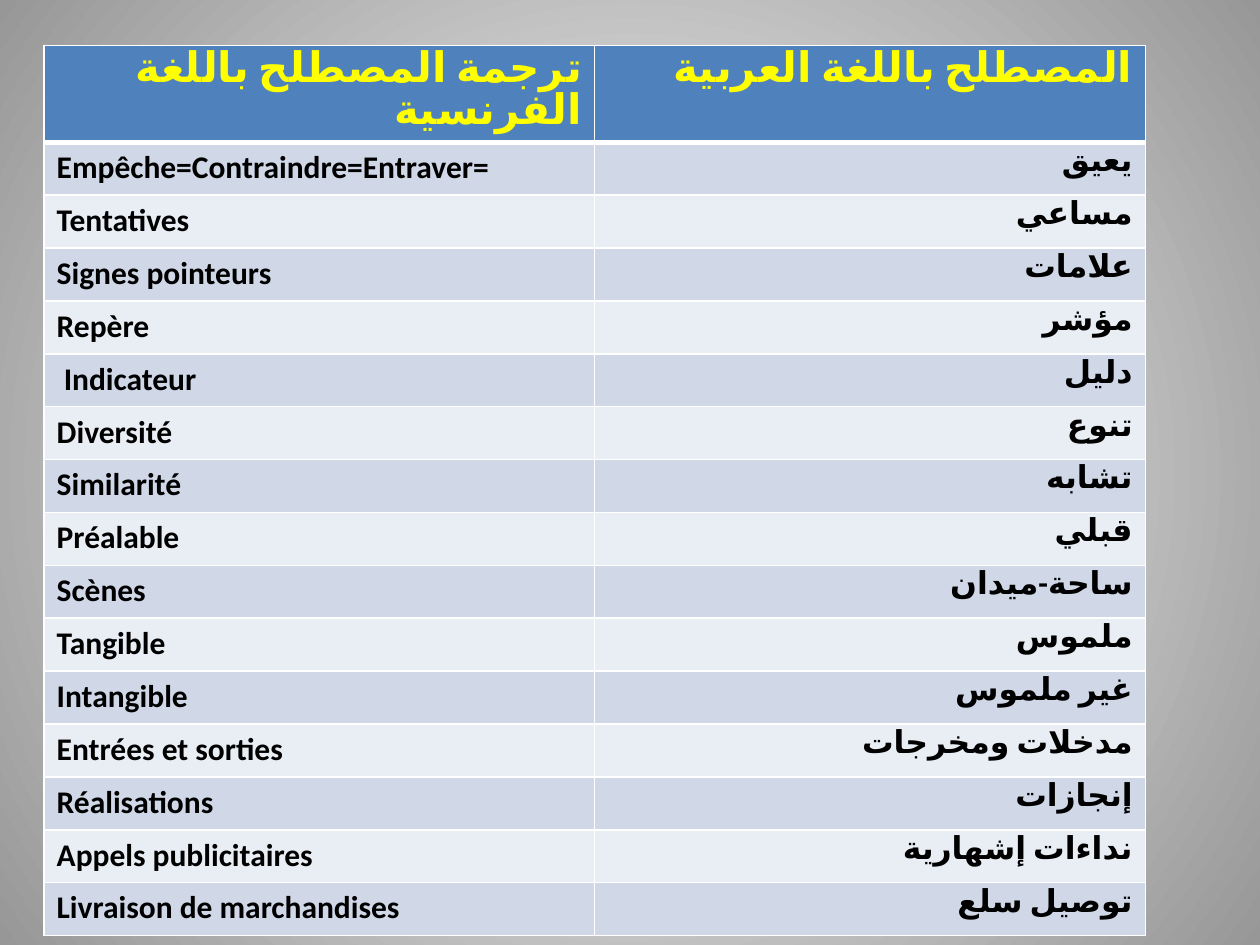
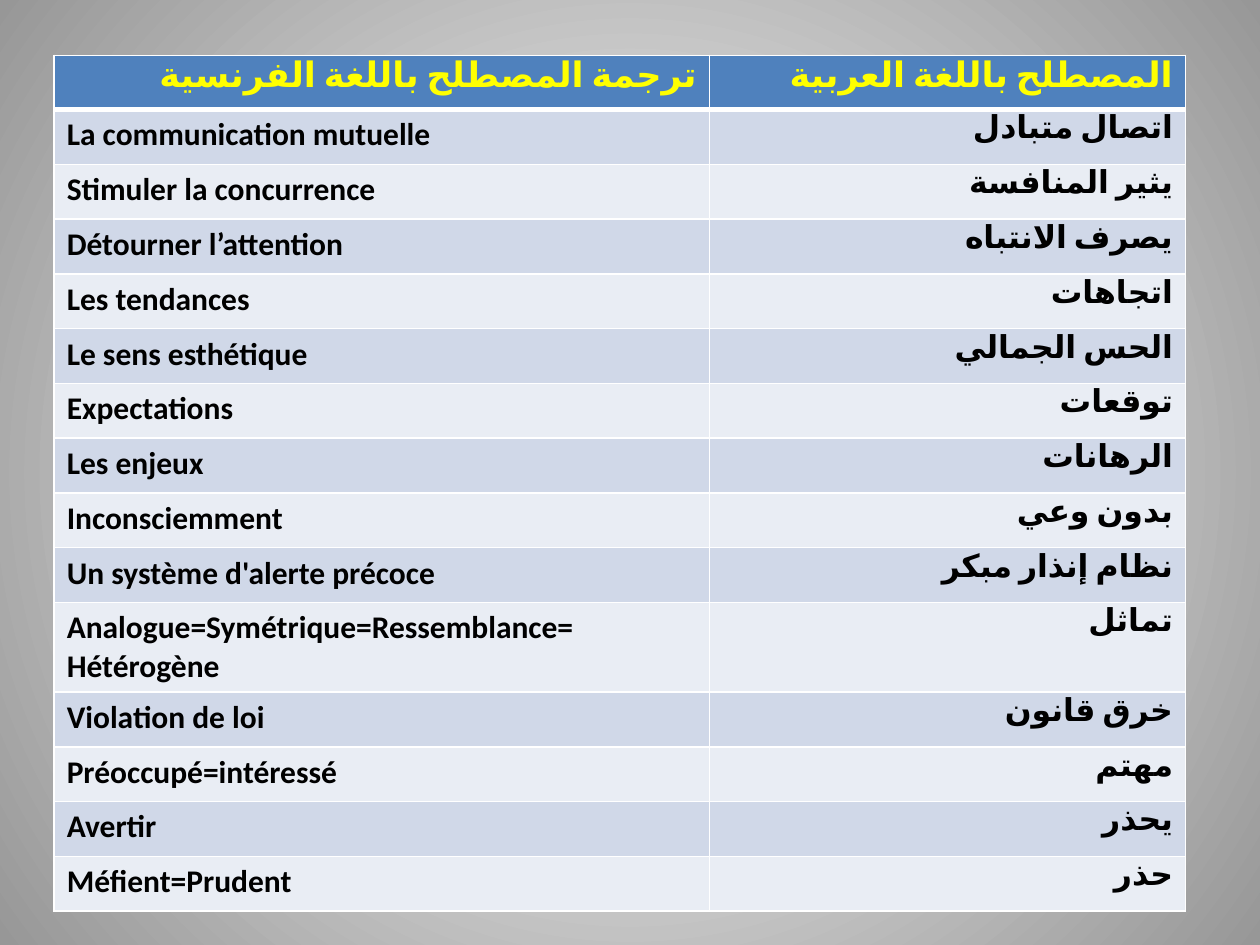
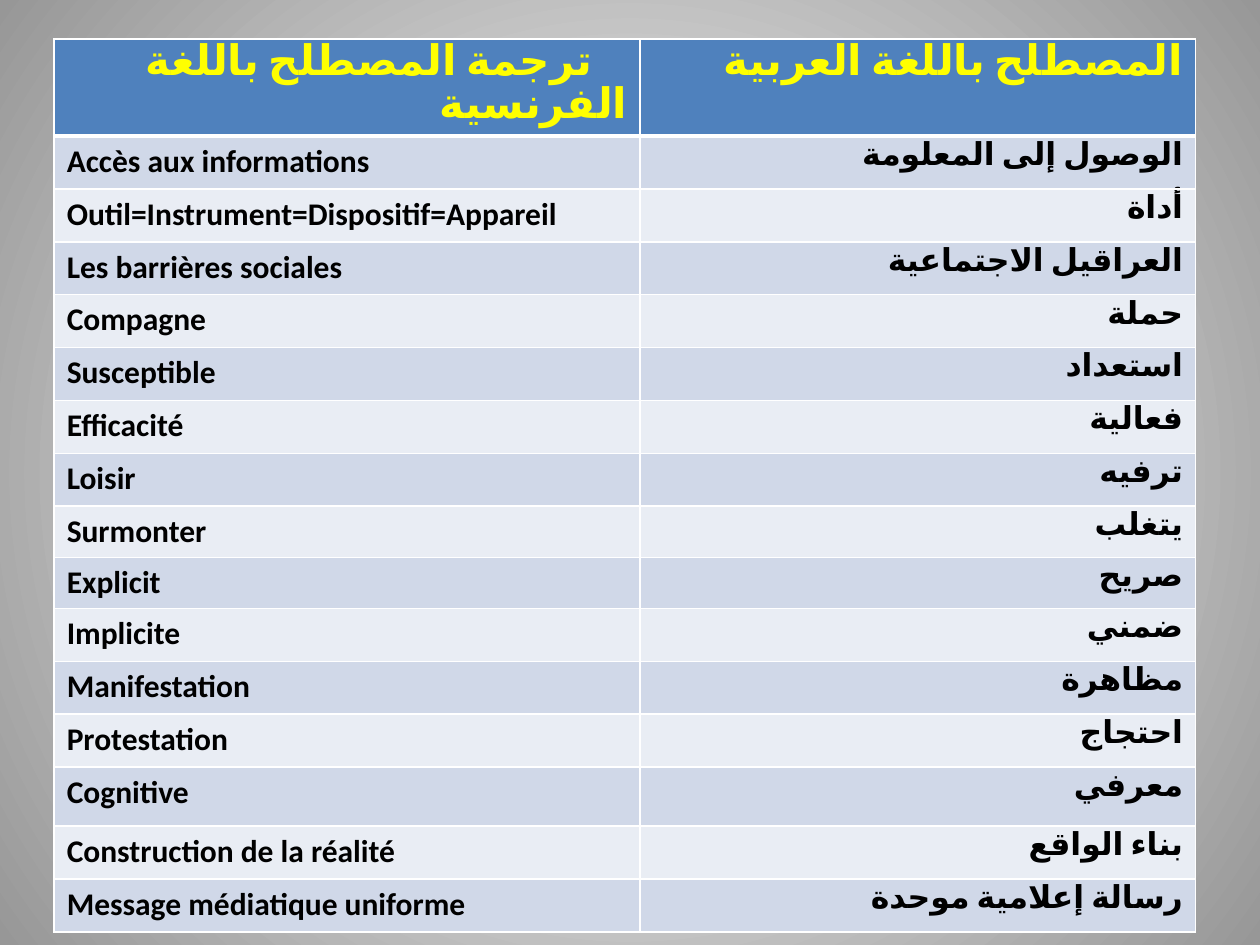
from lxml import etree
from pptx import Presentation
from pptx.dml.color import RGBColor
from pptx.enum import text
from pptx.oxml import ns
from pptx.util import Inches, Pt

FONT = "Calibri"
WHITE = RGBColor(0xFF, 0xFF, 0xFF)
GREY = RGBColor(0x97, 0x97, 0x97)
YELLOW = RGBColor(0xFF, 0xFF, 0x00)
BLACK = RGBColor(0x00, 0x00, 0x00)
HEADER_BLUE = RGBColor(0x4F, 0x81, 0xBD)
BAND_FILLS = (RGBColor(0xE9, 0xED, 0xF4), RGBColor(0xD0, 0xD8, 0xE8))

HEADER = ("ترجمة المصطلح باللغة الفرنسية", "المصطلح باللغة العربية")

MARKETING_TERMS = [
    ("Empêche=Contraindre=Entraver=", "يعيق"),
    ("Tentatives", "مساعي"),
    ("Signes pointeurs", "علامات"),
    ("Repère", "مؤشر"),
    (" Indicateur", "دليل"),
    ("Diversité", "تنوع"),
    ("Similarité", "تشابه"),
    ("Préalable", "قبلي"),
    ("Scènes", "ساحة-ميدان"),
    ("Tangible", "ملموس"),
    ("Intangible", "غير ملموس"),
    ("Entrées et sorties", "مدخلات ومخرجات"),
    ("Réalisations", "إنجازات"),
    ("Appels publicitaires", "نداءات إشهارية"),
    ("Livraison de marchandises", "توصيل سلع"),
]

ATTENTION_TERMS = [
    ("La communication mutuelle", "اتصال متبادل"),
    ("Stimuler la concurrence", "يثير المنافسة"),
    ("Détourner l’attention", "يصرف الانتباه"),
    ("Les tendances", "اتجاهات"),
    ("Le sens esthétique", "الحس الجمالي"),
    ("Expectations", "توقعات"),
    ("Les enjeux", "الرهانات"),
    ("Inconsciemment", "بدون وعي"),
    ("Un système d'alerte précoce", "نظام إنذار مبكر"),
    ("Analogue=Symétrique=Ressemblance=\nHétérogène", "تماثل"),
    ("Violation de loi", "خرق قانون"),
    ("Préoccupé=intéressé", "مهتم"),
    ("Avertir", "يحذر"),
    ("Méfient=Prudent", "حذر"),
]

MEDIA_TERMS = [
    ("Accès aux informations", "الوصول إلى المعلومة"),
    ("Outil=Instrument=Dispositif=Appareil", "أداة"),
    ("Les barrières sociales", "العراقيل الاجتماعية"),
    ("Compagne", "حملة"),
    ("Susceptible", "استعداد"),
    ("Efficacité", "فعالية"),
    ("Loisir", "ترفيه"),
    ("Surmonter", "يتغلب"),
    ("Explicit", "صريح"),
    ("Implicite", "ضمني"),
    ("Manifestation", "مظاهرة"),
    ("Protestation", "احتجاج"),
    ("Cognitive", "معرفي"),
    ("Construction de la réalité", "بناء الواقع"),
    ("Message médiatique uniforme", "رسالة إعلامية موحدة"),
]


def set_background(master):
    fill = master.background.fill
    fill.gradient()
    for stop, color in zip(fill.gradient_stops, (WHITE, GREY)):
        stop.color.rgb = color
    grad = master.element.find(".//" + ns.qn("a:gradFill"))
    grad.remove(grad.find(ns.qn("a:lin")))
    circle = etree.SubElement(grad, ns.qn("a:path"), path="circle")
    etree.SubElement(circle, ns.qn("a:fillToRect"), dict.fromkeys("ltrb", "50000"))


def write(tf, content, size=18, color=BLACK, rtl=False, indent=0):
    for i, line in enumerate(content.split("\n")):
        p = tf.add_paragraph() if i else tf.paragraphs[0]
        r = p.add_run()
        r.text = line
        r.font.name = FONT
        r.font.size = Pt(size)
        r.font.bold = True
        r.font.color.rgb = color
        if rtl:
            p.alignment = text.PP_ALIGN.RIGHT
            p.line_spacing = Pt(size)
            p._p.get_or_add_pPr().set("rtl", "1")
            rPr = r._r.get_or_add_rPr()
            rPr.set("lang", "ar-DZ")
            etree.SubElement(rPr, ns.qn("a:cs"), typeface=FONT)
        if indent:
            p._p.get_or_add_pPr().set("indent", str(Inches(indent)))


def set_borders(cell, top=1, bottom=1):
    tcPr = cell._tc.get_or_add_tcPr()
    for side, width in (("L", 1), ("R", 1), ("T", top), ("B", bottom)):
        ln = etree.SubElement(tcPr, ns.qn("a:ln" + side), w=str(Pt(width)))
        solid = etree.SubElement(ln, ns.qn("a:solidFill"))
        etree.SubElement(solid, ns.qn("a:srgbClr"), val=str(WHITE))


def fill_cell(cell, content, fill, top=1, bottom=1, **fmt):
    set_borders(cell, top, bottom)
    cell.fill.solid()
    cell.fill.fore_color.rgb = fill
    write(cell.text_frame, content, **fmt)


def add_glossary(prs, terms, left, top, col_widths, header_height, row_height,
                 header_size=24, header_indent=0, special_heights=None):
    s = prs.slides.add_slide(prs.slide_layouts[6])
    heights = [header_height] + [row_height] * len(terms)
    for row, height in (special_heights or {}).items():
        heights[row] = height
    table = s.shapes.add_table(
        len(heights), 2, Inches(left), Inches(top),
        Inches(sum(col_widths)), Inches(sum(heights))).table
    for column, width in zip(table.columns, col_widths):
        column.width = Inches(width)
    for row, height in zip(table.rows, heights):
        row.height = Inches(height)
    for col, title in enumerate(HEADER):
        fill_cell(table.cell(0, col), title, HEADER_BLUE, bottom=3, size=header_size,
                  color=YELLOW, rtl=True, indent=0 if col else header_indent)
    for row, term in enumerate(terms, 1):
        for col, word in enumerate(term):
            fill_cell(table.cell(row, col), word, BAND_FILLS[row % 2],
                      top=3 if row == 1 else 1, rtl=col == 1)


def main():
    prs = Presentation()
    prs.slide_width, prs.slide_height = Inches(10), Inches(7.5)
    set_background(prs.slide_master)
    add_glossary(prs, MARKETING_TERMS, 0.35, 0.36, (4.37, 4.37), 0.77, 0.42)
    add_glossary(prs, ATTENTION_TERMS, 0.43, 0.44, (5.2, 3.78), 0.43, 0.435,
                 header_size=20, special_heights={10: 0.71})
    add_glossary(prs, MEDIA_TERMS, 0.43, 0.31, (4.65, 4.41), 0.77, 0.42,
                 header_indent=0.28, special_heights={8: 0.32, 9: 0.29, 13: 0.47})
    prs.save("out.pptx")


if __name__ == "__main__":
    main()
